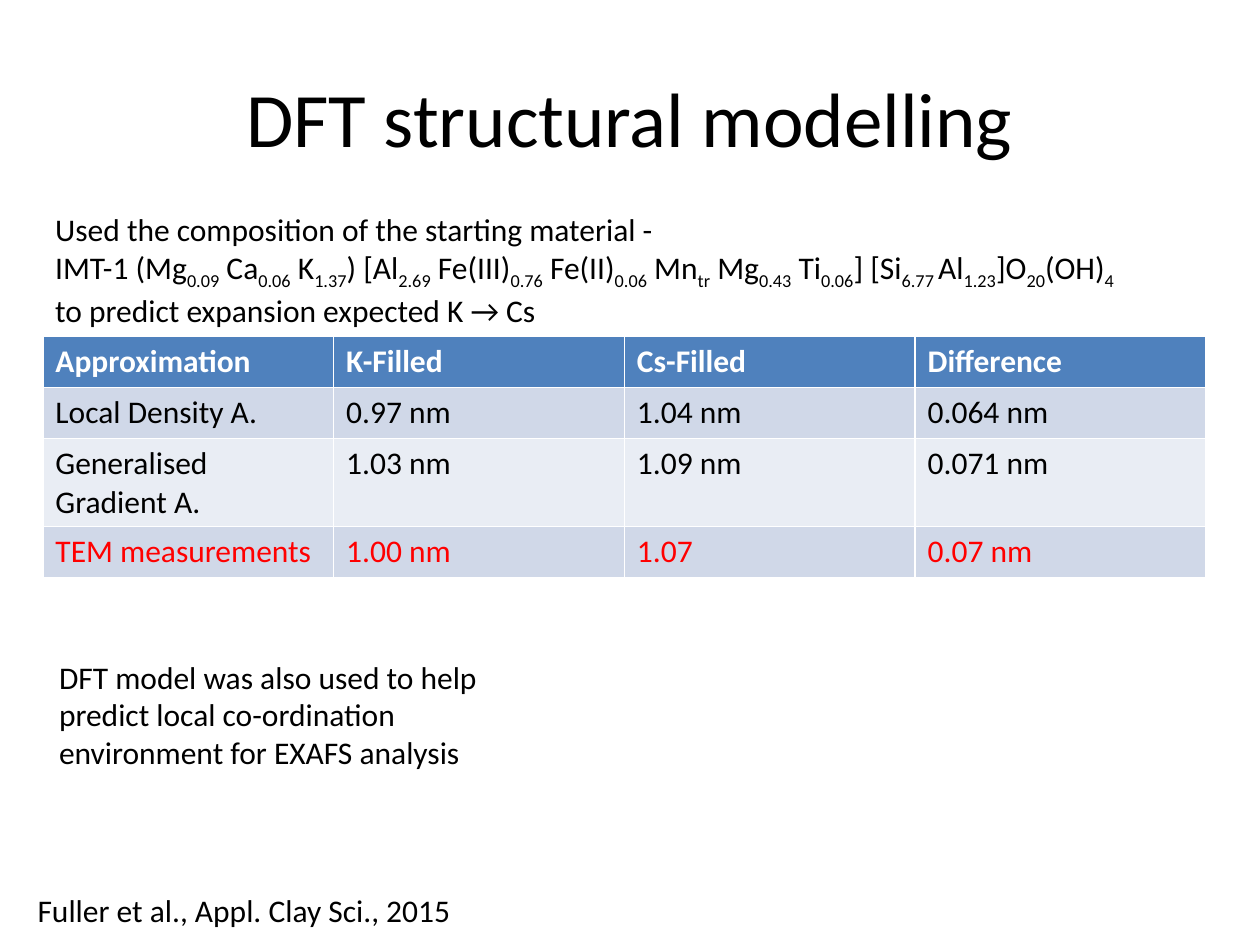
import dataclasses

import pptx
import pptx.dml.color
import pptx.enum.shapes
import pptx.enum.text
import pptx.util


@dataclasses.dataclass(frozen=True)
class Theme:
    """Hold the slide's font, type sizes in points and colours."""
    font: str = "Calibri"
    title: int = 44
    body: int = 18
    ink: str = "000000"
    paper: str = "FFFFFF"
    measured: str = "FF0000"
    header: str = "4F81BD"
    bands: tuple = ("D0D8E8", "E9EDF4")


THEME = Theme()
WIDTH, HEIGHT = pptx.util.Inches(10), pptx.util.Inches(7.5)

COMPOSITION = (
    "Used the composition of the starting material -\n"
    "IMT-1 (Mg{0.09} Ca{0.06} K{1.37}) [Al{2.69} Fe(III){0.76} Fe(II){0.06} Mn{tr}"
    " Mg{0.43} Ti{0.06}] [Si{6.77 }Al{1.23}]O{20}(OH){4}\n"
    "to predict expansion expected K → Cs"
)
SPACINGS = (
    ("Approximation", "K-Filled", "Cs-Filled", "Difference"),
    ("Local Density A.", "0.97 nm", "1.04 nm", "0.064 nm"),
    ("Generalised Gradient A.", "1.03 nm", "1.09 nm", "0.071 nm"),
    ("TEM measurements", "1.00 nm", "1.07", "0.07 nm"),
)


def rgb(code):
    """Turn a hexadecimal code into a colour."""
    return pptx.dml.color.RGBColor.from_string(code)


def area(left, top, width, height):
    """Turn percentages of the slide's size into lengths."""
    return [round(whole * share / 100) for whole, share in
            zip((WIDTH, HEIGHT) * 2, (left, top, width, height))]


def paint(target, colour):
    """Give a shape or a cell a solid fill."""
    target.fill.solid()
    target.fill.fore_color.rgb = rgb(colour)


def write(frame, text, size=THEME.body, colour=THEME.ink, bold=False, align=None,
          anchor=None, wrap=True):
    """Write lines of text, with braces around each subscript."""
    frame.word_wrap = wrap
    if anchor is not None:
        frame.vertical_anchor = anchor
    for number, line in enumerate(text.split("\n")):
        paragraph = frame.add_paragraph() if number else frame.paragraphs[0]
        paragraph.alignment = align
        for position, piece in enumerate(line.replace("}", "{").split("{")):
            if not piece:
                continue
            run = paragraph.add_run()
            run.text = piece
            run.font.name, run.font.size = THEME.font, pptx.util.Pt(size)
            run.font.bold = bold
            run.font.color.rgb = rgb(colour)
            if position % 2:
                run.font._element.set("baseline", "-25000")


def add_text(slide, place, text, **style):
    """Add a text box at a place given in percentages."""
    write(slide.shapes.add_textbox(*area(*place)).text_frame, text, **style)


def add_spacings(slide, place):
    """Add the table of predicted and measured spacings."""
    table = slide.shapes.add_table(len(SPACINGS), len(SPACINGS[0]), *area(*place)).table
    last = len(SPACINGS) - 1
    for row, values in enumerate(SPACINGS):
        fill = THEME.bands[(row - 1) % 2] if row else THEME.header
        colour = {0: THEME.paper, last: THEME.measured}.get(row, THEME.ink)
        for column, value in enumerate(values):
            cell = table.cell(row, column)
            paint(cell, fill)
            write(cell.text_frame, value, colour=colour, bold=row == 0)


def add_citation(slide, place, text):
    """Add the source reference on a plain white rectangle."""
    citation = slide.shapes.add_shape(
        pptx.enum.shapes.MSO_SHAPE.RECTANGLE, *area(*place))
    citation.shadow.inherit = False
    paint(citation, THEME.paper)
    citation.line.fill.background()
    write(citation.text_frame, text, wrap=False, align=pptx.enum.text.PP_ALIGN.LEFT,
          anchor=pptx.enum.text.MSO_ANCHOR.TOP)


def main():
    """Build the slide and save it."""
    deck = pptx.Presentation()
    deck.slide_width, deck.slide_height = WIDTH, HEIGHT
    slide = deck.slides.add_slide(deck.slide_layouts[6])
    add_text(slide, (5, 4, 90, 16.67), "DFT structural modelling", size=THEME.title,
             align=pptx.enum.text.PP_ALIGN.CENTER,
             anchor=pptx.enum.text.MSO_ANCHOR.MIDDLE)
    add_text(slide, (3.4, 21.6, 93.7, 13.47), COMPOSITION)
    add_spacings(slide, (3.4, 35.6, 92.3, 21.6))
    add_text(slide, (3.7, 68.93, 37.8, 13.47),
             "DFT model was also used to help predict local co-ordination "
             "environment for EXAFS analysis")
    add_citation(slide, (2, 93.6, 36.4, 5.33), "Fuller et al., Appl. Clay Sci., 2015")
    deck.save("out.pptx")


if __name__ == "__main__":
    main()
